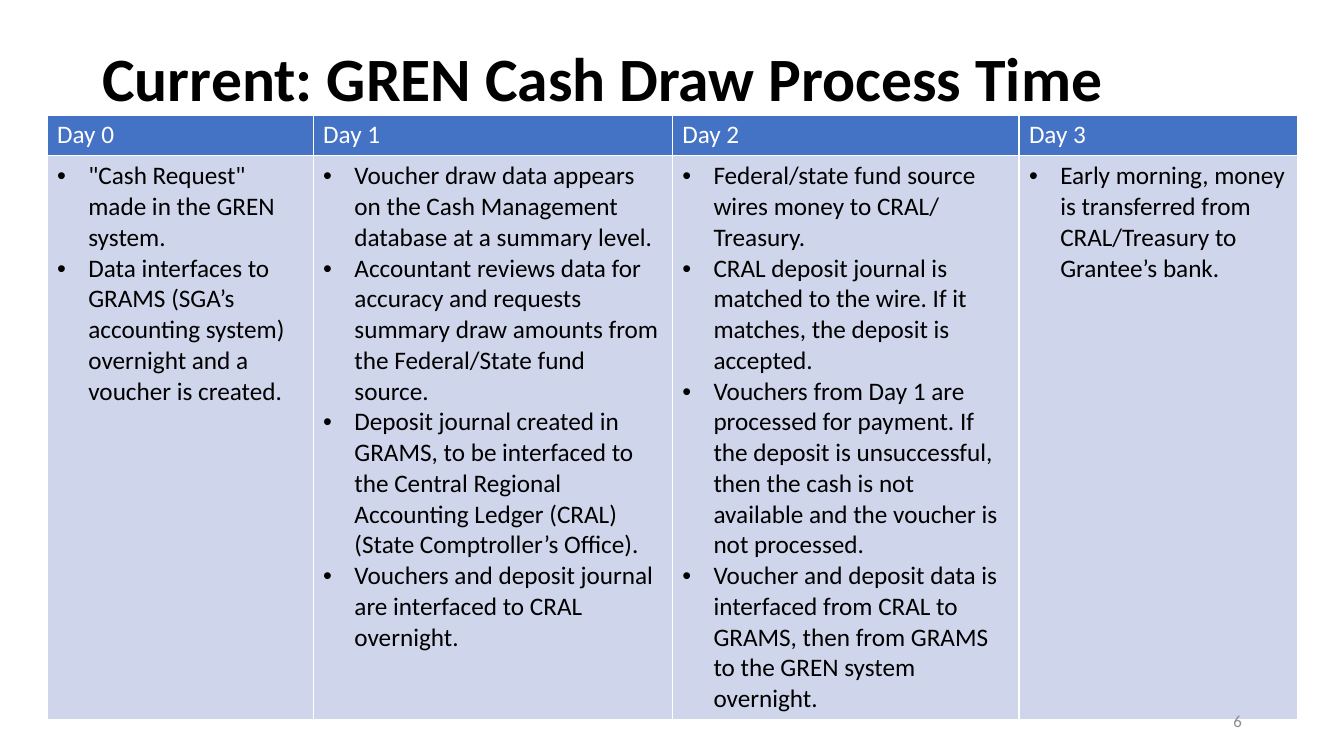
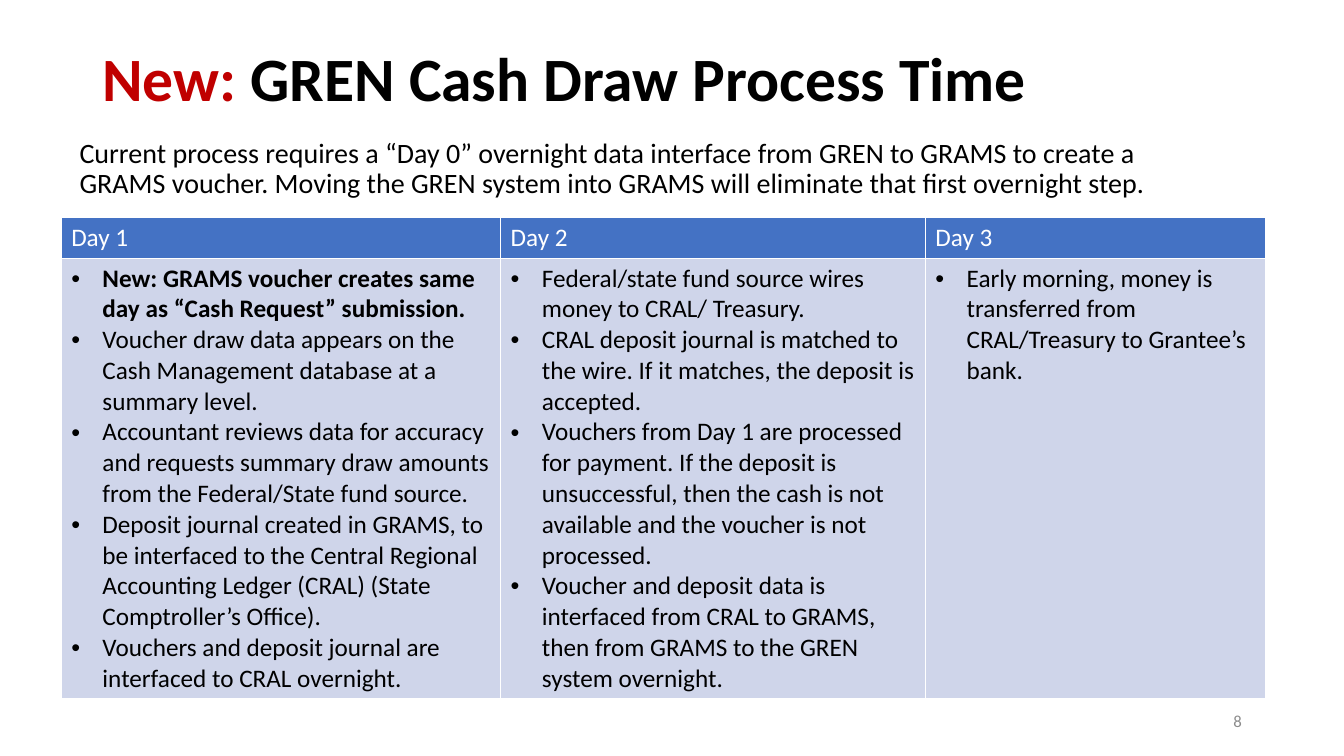
"""Builds two slides that compare the current and the new cash draw process time."""
import lxml.etree
import pptx
import pptx.dml.color
import pptx.enum.text
import pptx.oxml.ns
import pptx.util

FONT = "Calibri"
BLACK, WHITE, RED, GREY = "000000", "FFFFFF", "C00000", "8C8C8C"
HEADER_FILL, BODY_FILL = "4472C4", "CFD5EA"
TITLE_AREA = (6.88, 5.33, 86.25, 10.93)
INTRO_AREA = (5.18, 17.73, 86.25, 10.93)
NUMBER_AREA = (70.65, 92.67, 22.5, 5.33)
HEADER_HEIGHT = 5.4
BULLET_INDENT = pptx.util.Inches(0.31)
TOP, MIDDLE = pptx.enum.text.MSO_ANCHOR.TOP, pptx.enum.text.MSO_ANCHOR.MIDDLE
LEFT, RIGHT = pptx.enum.text.PP_ALIGN.LEFT, pptx.enum.text.PP_ALIGN.RIGHT

TITLE = "GREN Cash Draw Process Time"
INTRO = (
    "Current process requires a “Day 0” overnight data interface from GREN to GRAMS "
    "to create a GRAMS voucher. Moving the GREN system into GRAMS will eliminate "
    "that first overnight step."
)
NEW_STEP = "New: GRAMS voucher creates same day as “Cash Request” submission."
REQUEST_STEPS = [
    "\"Cash Request\" made in the GREN system.",
    "Data interfaces to GRAMS (SGA’s accounting system) overnight and a voucher is created.",
]
VOUCHER_STEPS = [
    "Voucher draw data appears on the Cash Management database at a summary level.",
    "Accountant reviews data for accuracy and requests summary draw amounts "
    "from the Federal/State fund source.",
    "Deposit journal created in GRAMS, to be interfaced to the Central Regional "
    "Accounting Ledger (CRAL) (State Comptroller’s Office).",
    "Vouchers and deposit journal are interfaced to CRAL overnight.",
]
DEPOSIT_STEPS = [
    "Federal/state fund source wires money to CRAL/ Treasury.",
    "CRAL deposit journal is matched to the wire. If it matches, the deposit is accepted.",
    "Vouchers from Day 1 are processed for payment. If the deposit is unsuccessful, "
    "then the cash is not available and the voucher is not processed.",
    "Voucher and deposit data is interfaced from CRAL to GRAMS, then from GRAMS "
    "to the GREN system overnight.",
]
TRANSFER_STEPS = ["Early morning, money is transferred from CRAL/Treasury to Grantee’s bank."]

SLIDES = [
    {
        "title": [("Current: ", BLACK), (TITLE, BLACK)],
        "intro": "",
        "number": "6",
        "corner": (3.5, 15.2),
        "body_height": 74.4,
        "days": [
            ("Day 0", 19.8, REQUEST_STEPS),
            ("Day 1", 26.72, VOUCHER_STEPS),
            ("Day 2", 25.8, DEPOSIT_STEPS),
            ("Day 3", 20.7, TRANSFER_STEPS),
        ],
    },
    {
        "title": [("New: ", RED), (TITLE, BLACK)],
        "intro": INTRO,
        "number": "8",
        "corner": (4.55, 28.75),
        "body_height": 58.2,
        "days": [
            ("Day 1", 32.7, [NEW_STEP] + VOUCHER_STEPS),
            ("Day 2", 31.6, DEPOSIT_STEPS),
            ("Day 3", 25.35, TRANSFER_STEPS),
        ],
    },
]

presentation = pptx.Presentation()
presentation.slide_width = pptx.util.Inches(13.33)
presentation.slide_height = pptx.util.Inches(7.5)


def share(percents):
    sizes = (presentation.slide_width, presentation.slide_height) * 2
    return [int(size * percent / 100) for size, percent in zip(sizes, percents)]


def format_run(run, size, color, bold=False):
    run.font.name = FONT
    run.font.size = pptx.util.Pt(size)
    run.font.bold = bold
    run.font.color.rgb = pptx.dml.color.RGBColor.from_string(color)


for content in SLIDES:
    slide = presentation.slides.add_slide(presentation.slide_layouts[6])

    days = content["days"]
    table_width = sum(width for _, width, _ in days)
    table_height = HEADER_HEIGHT + content["body_height"]
    area = share((*content["corner"], table_width, table_height))
    table = slide.shapes.add_table(2, len(days), *area).table
    for row, height in zip(table.rows, (HEADER_HEIGHT, content["body_height"])):
        row.height = share((0, height))[1]

    for column, (day, width, steps) in enumerate(days):
        table.columns[column].width = share((width,))[0]
        table.cell(0, column).text_frame.text = day
        table.cell(1, column).text_frame.text = "\n".join(steps)

        for row, (fill, color) in enumerate([(HEADER_FILL, WHITE), (BODY_FILL, BLACK)]):
            cell = table.cell(row, column)
            properties = cell._tc.get_or_add_tcPr()
            for side in ("lnL", "lnR", "lnT", "lnB"):
                border = lxml.etree.SubElement(
                    properties, pptx.oxml.ns.qn(f"a:{side}"), w=str(pptx.util.Pt(1))
                )
                line_fill = lxml.etree.SubElement(border, pptx.oxml.ns.qn("a:solidFill"))
                lxml.etree.SubElement(line_fill, pptx.oxml.ns.qn("a:srgbClr"), val=WHITE)
            cell.fill.solid()
            cell.fill.fore_color.rgb = pptx.dml.color.RGBColor.from_string(fill)
            for paragraph in cell.text_frame.paragraphs:
                for run in paragraph.runs:
                    format_run(run, 18, color, run.text == NEW_STEP)

        for paragraph in table.cell(1, column).text_frame.paragraphs:
            properties = paragraph._p.get_or_add_pPr()
            properties.set("marL", str(BULLET_INDENT))
            properties.set("indent", str(-BULLET_INDENT))
            lxml.etree.SubElement(properties, pptx.oxml.ns.qn("a:buFont"), typeface="Arial")
            lxml.etree.SubElement(properties, pptx.oxml.ns.qn("a:buChar"), char="•")

    boxes = [
        (TITLE_AREA, content["title"], 44, True, MIDDLE, LEFT, 0.9, 0),
        (INTRO_AREA, [(content["intro"], BLACK)], 20, False, TOP, LEFT, 0.9, 10),
        (NUMBER_AREA, [(content["number"], GREY)], 12, False, MIDDLE, RIGHT, 1.0, 0),
    ]
    for area, pieces, size, bold, anchor, alignment, spacing, before in boxes:
        if not pieces[0][0]:
            continue
        text_frame = slide.shapes.add_textbox(*share(area)).text_frame
        text_frame.word_wrap = True
        text_frame.vertical_anchor = anchor
        paragraph = text_frame.paragraphs[0]
        paragraph.alignment = alignment
        paragraph.line_spacing = spacing
        paragraph.space_before = pptx.util.Pt(before)
        for text, color in pieces:
            run = paragraph.add_run()
            run.text = text
            format_run(run, size, color, bold)

presentation.save("out.pptx")
